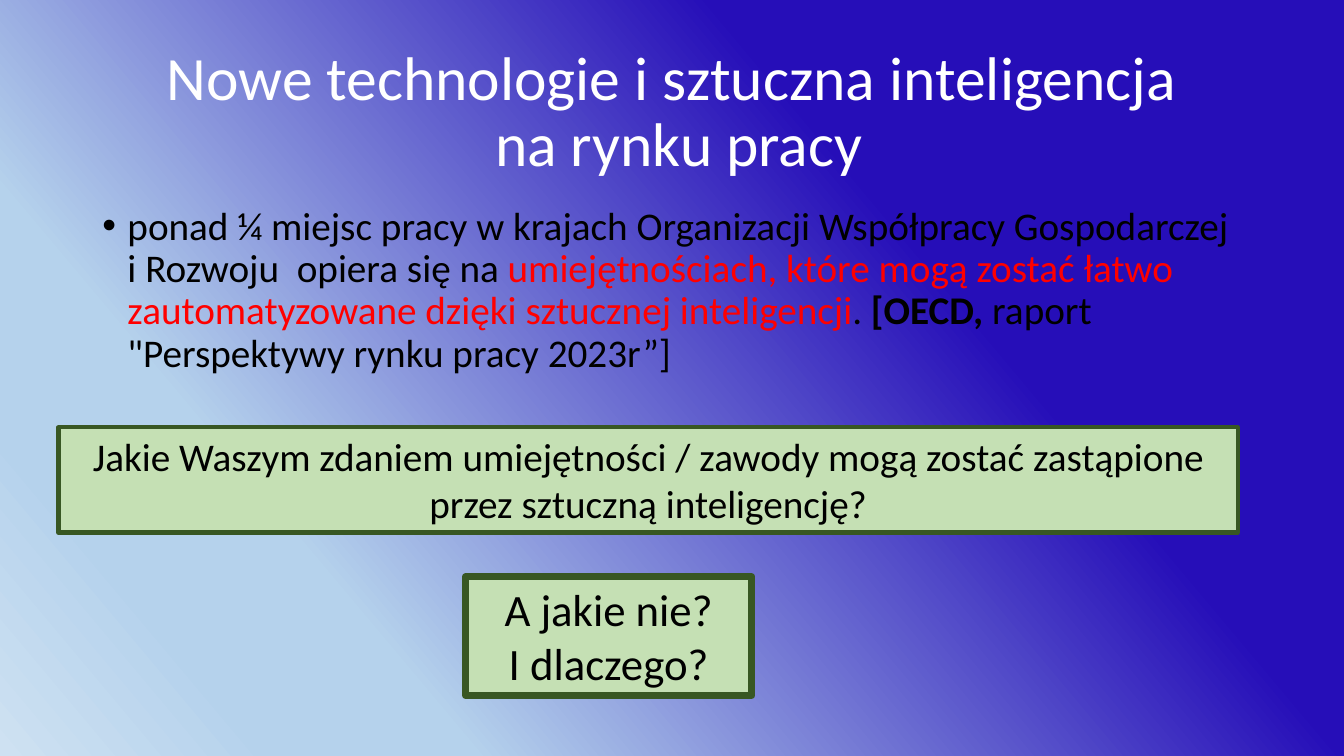
"""Build a slide on new technologies and AI in the labour market."""
from copy import deepcopy

from pptx import Presentation
from pptx.dml.color import RGBColor
from pptx.enum.shapes import MSO_SHAPE
from pptx.enum.text import MSO_ANCHOR as ANCHOR, MSO_AUTO_SIZE as AUTO, PP_ALIGN as ALIGN
from pptx.oxml.ns import qn
from pptx.oxml.xmlchemy import OxmlElement
from pptx.util import Pt


def rgb(color):
    """Return the colour of a hex string."""
    return RGBColor.from_string(color)


def add_par(p, runs, size, **fmt):
    """Fill a paragraph with (text, colour, bold) runs; a vertical tab breaks the line."""
    for name, value in fmt.items():
        setattr(p, name, value)
    for text, color, bold in runs:
        for i, line in enumerate(text.split("\v")):
            if i:
                p.add_line_break()
            r = p.add_run()
            r.text = line
            for name, value in {"name": "Calibri", "size": Pt(size), "bold": bold}.items():
                setattr(r.font, name, value)
            r.font.color.rgb = rgb(color)


prs = Presentation()
prs.slide_width, prs.slide_height = Pt(960), Pt(540)
s = prs.slides.add_slide(prs.slide_layouts[6])

STOPS = [(0.32, "260EB8"), (0.76, "B5D2EC"), (0.86, "B5D2EC"), (1, "CEE1F2")]
fill = s.background.fill
fill.gradient()
fill.gradient_angle = 220
stop_list = next(s.element.iter(qn("a:gsLst")))
while len(stop_list) < len(STOPS):
    stop_list.append(deepcopy(stop_list[0]))
for stop, (position, color) in zip(fill.gradient_stops, STOPS):
    stop.position = position
    stop.color.rgb = rgb(color)

tf = s.shapes.add_textbox(Pt(66), Pt(28.75), Pt(828), Pt(104.4)).text_frame
tf.word_wrap = True
tf.vertical_anchor = ANCHOR.MIDDLE
title = "Nowe technologie i sztuczna inteligencja\v na rynku pracy"
add_par(tf.paragraphs[0], [(title, "FFFFFF", False)], 44,
        alignment=ALIGN.CENTER, line_spacing=0.9)

tf = s.shapes.add_textbox(Pt(66), Pt(143.75), Pt(828), Pt(342.6)).text_frame
tf.word_wrap = True
p = tf.paragraphs[0]
add_par(p, [
    ("ponad ¼ miejsc pracy w krajach Organizacji Współpracy Gospodarczej "
     "i Rozwoju  opiera się na ", "000000", False),
    ("umiejętnościach, które mogą zostać łatwo zautomatyzowane dzięki "
     "sztucznej inteligencji", "FF0000", False),
    (". ", "000000", False),
    ("[OECD, ", "000000", True),
    ("raport \"Perspektywy rynku pracy 2023r”]", "000000", False),
], 28, line_spacing=0.9, space_before=Pt(10))
pPr = p._p.get_or_add_pPr()
pPr.set("marL", str(Pt(18)))
pPr.set("indent", str(-Pt(18)))
for tag, key, value in [("a:buFont", "typeface", "Arial"), ("a:buChar", "char", "•")]:
    bullet = OxmlElement(tag)
    bullet.set(key, value)
    pPr.append(bullet)

QUESTIONS = [
    ((41.75, 305.25, 842.4, 75.1), 3, 28,
     ["Jakie Waszym zdaniem umiejętności / zawody mogą zostać zastąpione "
      "przez sztuczną inteligencję?"]),
    ((332.6, 412, 204.5, 84.8), 5, 32, ["A jakie nie?", "I dlaczego?"]),
]
for box, weight, size, lines in QUESTIONS:
    sp = s.shapes.add_shape(MSO_SHAPE.RECTANGLE, *map(Pt, box))
    sp.shadow.inherit = False
    sp.fill.solid()
    sp.fill.fore_color.rgb = rgb("C5E0B4")
    sp.line.color.rgb = rgb("385723")
    sp.line.width = Pt(weight)
    tf = sp.text_frame
    layout = {"word_wrap": True, "auto_size": AUTO.SHAPE_TO_FIT_TEXT,
              "vertical_anchor": ANCHOR.TOP}
    for name, value in layout.items():
        setattr(tf, name, value)
    for i, line in enumerate(lines):
        p = tf.add_paragraph() if i else tf.paragraphs[0]
        add_par(p, [(line, "000000", False)], size, alignment=ALIGN.CENTER)

prs.save("out.pptx")
